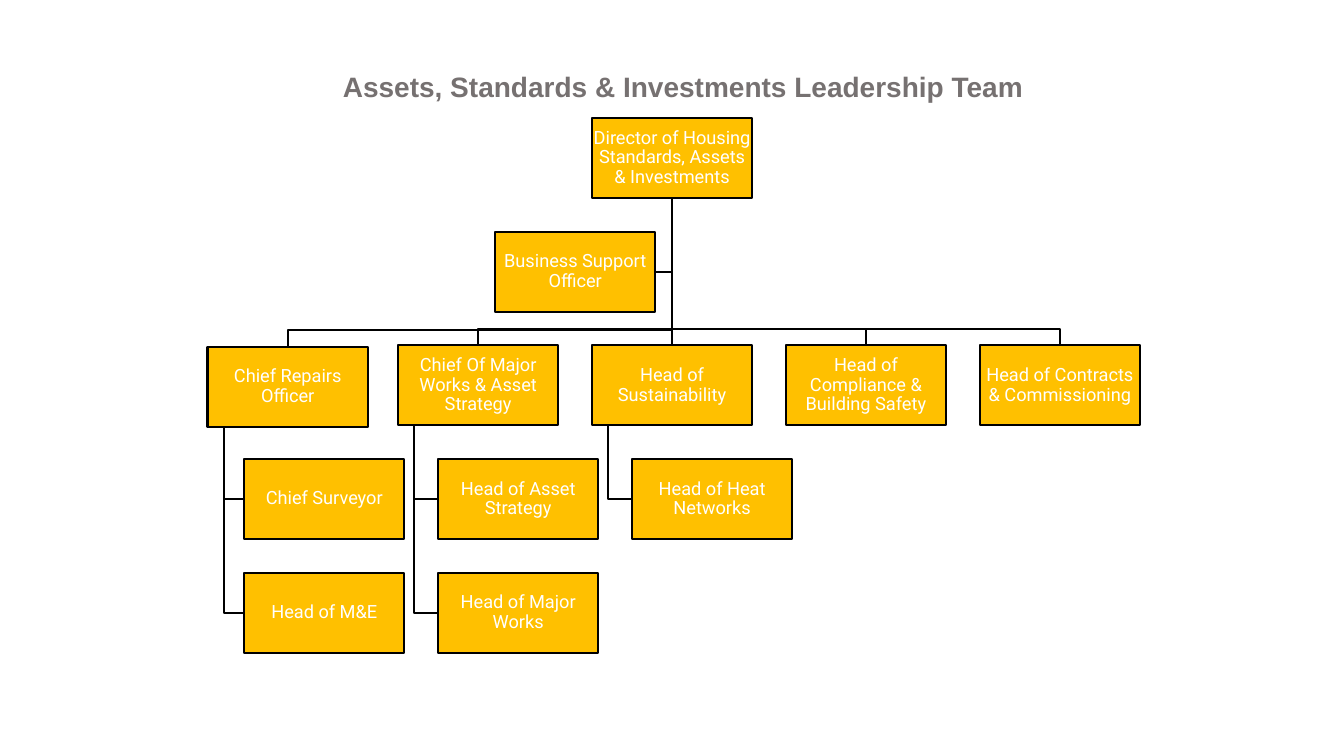
import pptx
import pptx.util
import pptx.dml.color
import pptx.enum.shapes
import pptx.enum.text
import pptx.oxml
import pptx.oxml.ns

Pt = pptx.util.Pt

# Content
TITLE = "Assets, Standards & Investments Leadership Team"
DIRECTOR = "Director of Housing Standards, Assets & Investments"
SUPPORT = "Business Support Officer"
# Head of each column, the shift of its box off the grid, and its reports
TEAMS = [
    ("Chief Repairs Officer", (2.5, 1), ["Chief Surveyor", "Head of M&E"]),
    ("Chief Of Major Works & Asset Strategy", (0, 0),
     ["Head of Asset Strategy", "Head of Major Works"]),
    ("Head of Sustainability", (0, 0), ["Head of Heat Networks"]),
    ("Head of Compliance & Building Safety", (0, 0), []),
    ("Head of Contracts & Commissioning", (0, 0), []),
]

# Layout, in points
SLIDE_W, SLIDE_H = 960, 540
BOX_W, BOX_H = 114.5, 57.2
COLUMN_STEP, ROW_STEP = 138.5, 81.2
TOP = 84.3
CENTRE = SLIDE_W / 2
SUPPORT_LEFT = 353.6
REPORT_INDENT = 28.6
TRUNK_INDENT = 11.5
BAR_RISE = 12
LINE_W = 1.5

GOLD, BLACK, WHITE, GREY = "FFC000", "000000", "FFFFFF", "767171"

presentation = pptx.Presentation()
presentation.slide_width, presentation.slide_height = Pt(SLIDE_W), Pt(SLIDE_H)
slide = presentation.slides.add_slide(presentation.slide_layouts[6])


def colour(value):
    return pptx.dml.color.RGBColor.from_string(value)


def style_line(line):
    line.color.rgb = colour(BLACK)
    line.width = Pt(LINE_W)


def write(shape, text, font_name, size, text_colour, bold=False):
    frame = shape.text_frame
    frame.word_wrap = True
    frame.vertical_anchor = pptx.enum.text.MSO_ANCHOR.MIDDLE
    paragraph = frame.paragraphs[0]
    paragraph.text = text
    paragraph.alignment = pptx.enum.text.PP_ALIGN.CENTER
    paragraph.line_spacing = 0.9
    font = paragraph.font
    font.name, font.size, font.bold = font_name, Pt(size), bold
    font.color.rgb = colour(text_colour)
    return frame


def add_role(text, left, top):
    role = slide.shapes.add_shape(
        pptx.enum.shapes.MSO_SHAPE.RECTANGLE,
        Pt(left), Pt(top), Pt(BOX_W), Pt(BOX_H))
    role.shadow.inherit = False
    role.fill.solid()
    role.fill.fore_color.rgb = colour(GOLD)
    style_line(role.line)
    frame = write(role, text, "Roboto", 13, WHITE)
    frame.margin_left = frame.margin_right = Pt(0.7)
    frame.margin_top = frame.margin_bottom = Pt(0.7)
    return role


def add_branch(*points):
    start, *corners = [(Pt(x), Pt(y)) for x, y in points]
    builder = slide.shapes.build_freeform(*start)
    builder.add_line_segments(corners, close=False)
    branch = builder.convert_to_shape()
    branch.shadow.inherit = False
    branch.fill.background()
    style_line(branch.line)


def add_straight_link(upper, lower):
    link = slide.shapes.add_connector(
        pptx.enum.shapes.MSO_CONNECTOR.STRAIGHT, 0, 0, 0, 0)
    link.begin_connect(upper, 2)
    link.end_connect(lower, 0)
    style_line(link.line)
    properties = link._element.spPr
    properties.append(pptx.oxml.parse_xml(
        "<a:effectLst %s/>" % pptx.oxml.ns.nsdecls("a")))


# Title
title = slide.shapes.add_textbox(Pt(39), Pt(10.8), Pt(898), Pt(104.4))
write(title, TITLE, "Arial", 20, GREY, bold=True)

# Director and support
director = add_role(DIRECTOR, CENTRE - BOX_W / 2, TOP)
director_foot = (CENTRE, TOP + BOX_H)
support_top = TOP + ROW_STEP
support_middle = support_top + BOX_H / 2
add_branch(director_foot, (CENTRE, support_middle),
           (SUPPORT_LEFT + BOX_W, support_middle))
add_role(SUPPORT, SUPPORT_LEFT, support_top)

# Teams
heads_top = TOP + 2 * ROW_STEP
for column, (head, (shift_x, shift_y), reports) in enumerate(TEAMS):
    column_left = CENTRE - BOX_W / 2 + (column - len(TEAMS) // 2) * COLUMN_STEP
    left, top = column_left + shift_x, heads_top + shift_y
    middle = left + BOX_W / 2
    head_box = add_role(head, left, top)
    if middle == CENTRE:
        add_straight_link(director, head_box)
    else:
        bar = top - BAR_RISE
        add_branch(director_foot, (CENTRE, bar), (middle, bar), (middle, top))

    trunk = left + TRUNK_INDENT
    report_left = column_left + REPORT_INDENT
    for row, report in enumerate(reports, start=1):
        report_top = heads_top + row * ROW_STEP
        report_middle = report_top + BOX_H / 2
        add_branch((trunk, top + BOX_H), (trunk, report_middle),
                   (report_left, report_middle))
        add_role(report, report_left, report_top)

presentation.save("out.pptx")
